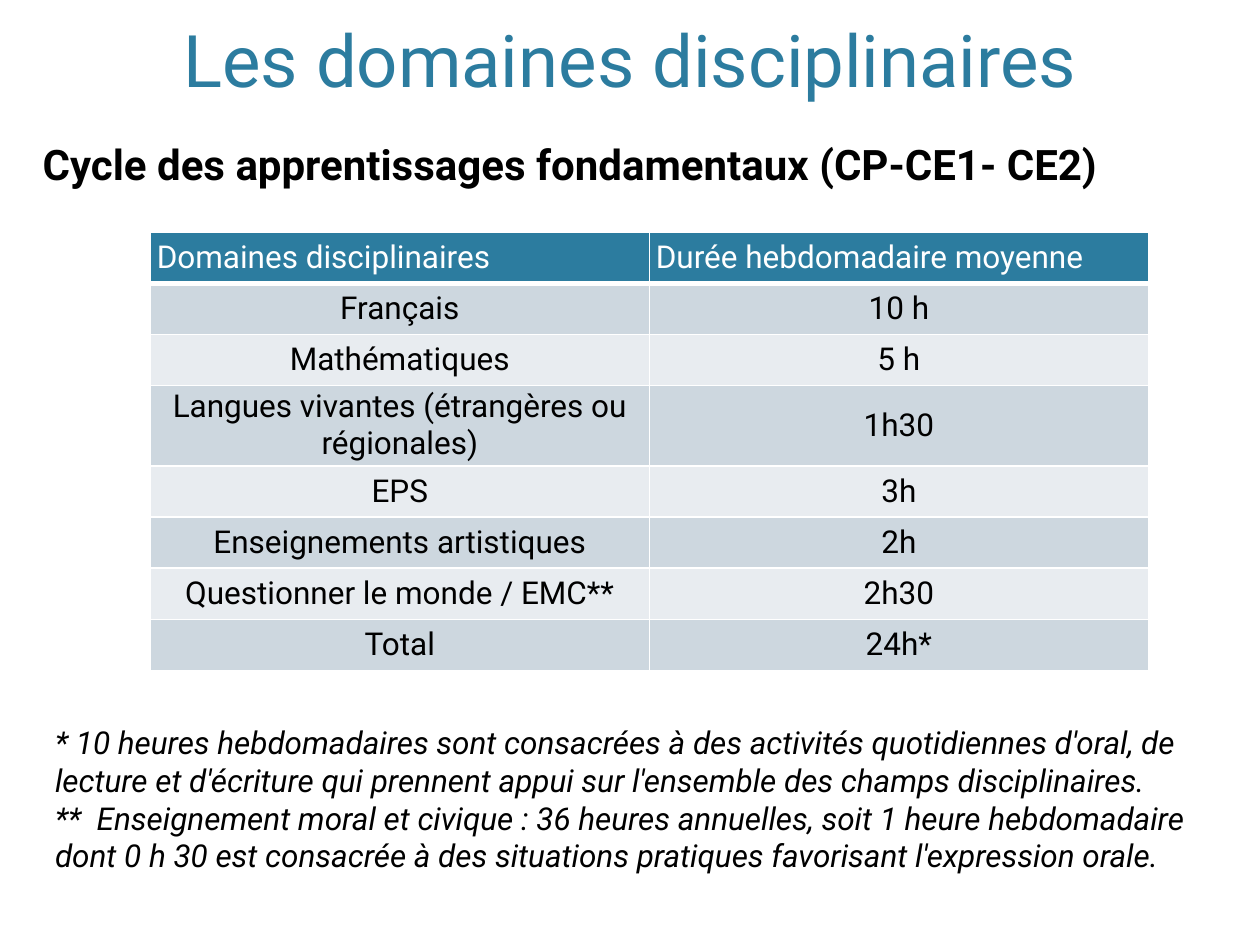
import pptx
import pptx.dml.color
import pptx.enum.text
import pptx.oxml
import pptx.oxml.ns
import pptx.util
from pptx.dml.color import RGBColor
from pptx.enum.text import MSO_ANCHOR, PP_ALIGN
from pptx.util import Cm

FONT = "Roboto"
TEAL = RGBColor(0x2C, 0x7C, 0x9F)
WHITE = RGBColor(0xFF, 0xFF, 0xFF)
BLACK = RGBColor(0, 0, 0)
BANDS = (RGBColor(0xCD, 0xD7, 0xDF), RGBColor(0xE8, 0xEC, 0xF0))

TITLE = "Les domaines disciplinaires"
SUBTITLE = "Cycle des apprentissages fondamentaux (CP-CE1- CE2)"
ROWS = [
    ("Domaines disciplinaires", "Durée hebdomadaire moyenne"),
    ("Français", "10 h"),
    ("Mathématiques", "5 h"),
    ("Langues vivantes (étrangères ou régionales)", "1h30"),
    ("EPS", "3h"),
    ("Enseignements artistiques", "2h"),
    ("Questionner le monde / EMC**", "2h30"),
    ("Total", "24h*"),
]
NOTES = [
    "* 10 heures hebdomadaires sont consacrées à des activités quotidiennes d'oral, de "
    "lecture et d'écriture qui prennent appui sur l'ensemble des champs disciplinaires.",
    "**  Enseignement moral et civique : 36 heures annuelles, soit 1 heure hebdomadaire "
    "dont 0 h 30 est consacrée à des situations pratiques favorisant l'expression orale.",
]


def write(frame, lines, size, color, align=PP_ALIGN.LEFT, bold=False, italic=False):
    frame.word_wrap = True
    frame.text = "\n".join(lines)
    for para in frame.paragraphs:
        para.alignment = align
        for span in para.runs:
            span.font.name = FONT
            span.font.size = pptx.util.Pt(size)
            span.font.color.rgb = color
            span.font.bold = bold
            span.font.italic = italic


def add_text(page, place, lines, size, color, anchor=MSO_ANCHOR.TOP, **style):
    box = page.shapes.add_textbox(*[Cm(length) for length in place])
    write(box.text_frame, lines, size, color, **style)
    box.text_frame.vertical_anchor = anchor


def add_borders(cell, is_header):
    properties = cell._tc.get_or_add_tcPr()
    for side in "LRTB":
        points = 3 if is_header and side == "B" else 1
        properties.append(pptx.oxml.parse_xml(
            f'<a:ln{side} {pptx.oxml.ns.nsdecls("a")} w="{pptx.util.Pt(points)}">'
            f'<a:solidFill><a:srgbClr val="{WHITE}"/></a:solidFill></a:ln{side}>'))


def add_schedule(page):
    row_height, column_width = 1.03, 10.06
    table = page.shapes.add_table(
        len(ROWS), len(ROWS[0]), Cm(3.03), Cm(4.68),
        Cm(column_width * len(ROWS[0])), Cm(row_height * len(ROWS))).table
    for column in table.columns:
        column.width = Cm(column_width)
    for index, texts in enumerate(ROWS):
        is_header = index == 0
        table.rows[index].height = Cm(row_height)
        for cell, text in zip(table.rows[index].cells, texts):
            cell.margin_left = cell.margin_right = Cm(0.13)
            cell.margin_top = cell.margin_bottom = Cm(0.1 if is_header else 0.05)
            cell.vertical_anchor = MSO_ANCHOR.MIDDLE
            add_borders(cell, is_header)
            cell.fill.solid()
            cell.fill.fore_color.rgb = TEAL if is_header else BANDS[(index - 1) % 2]
            write(cell.text_frame, [text], 18, WHITE if is_header else BLACK,
                  PP_ALIGN.LEFT if is_header else PP_ALIGN.CENTER)


def main():
    deck = pptx.Presentation()
    deck.slide_width, deck.slide_height = Cm(25.4), Cm(19.05)
    page = deck.slides.add_slide(deck.slide_layouts[6])
    add_text(page, (0, 0, 25.4, 2.18), [TITLE], 41.4, TEAL,
             MSO_ANCHOR.BOTTOM, align=PP_ALIGN.CENTER)
    add_schedule(page)
    add_text(page, (0.61, 2.67, 24.54, 1.27), [SUBTITLE], 24, BLACK, bold=True)
    add_text(page, (0.86, 14.45, 24.13, 4.11), NOTES, 18, BLACK, italic=True)
    deck.save("out.pptx")


if __name__ == "__main__":
    main()
